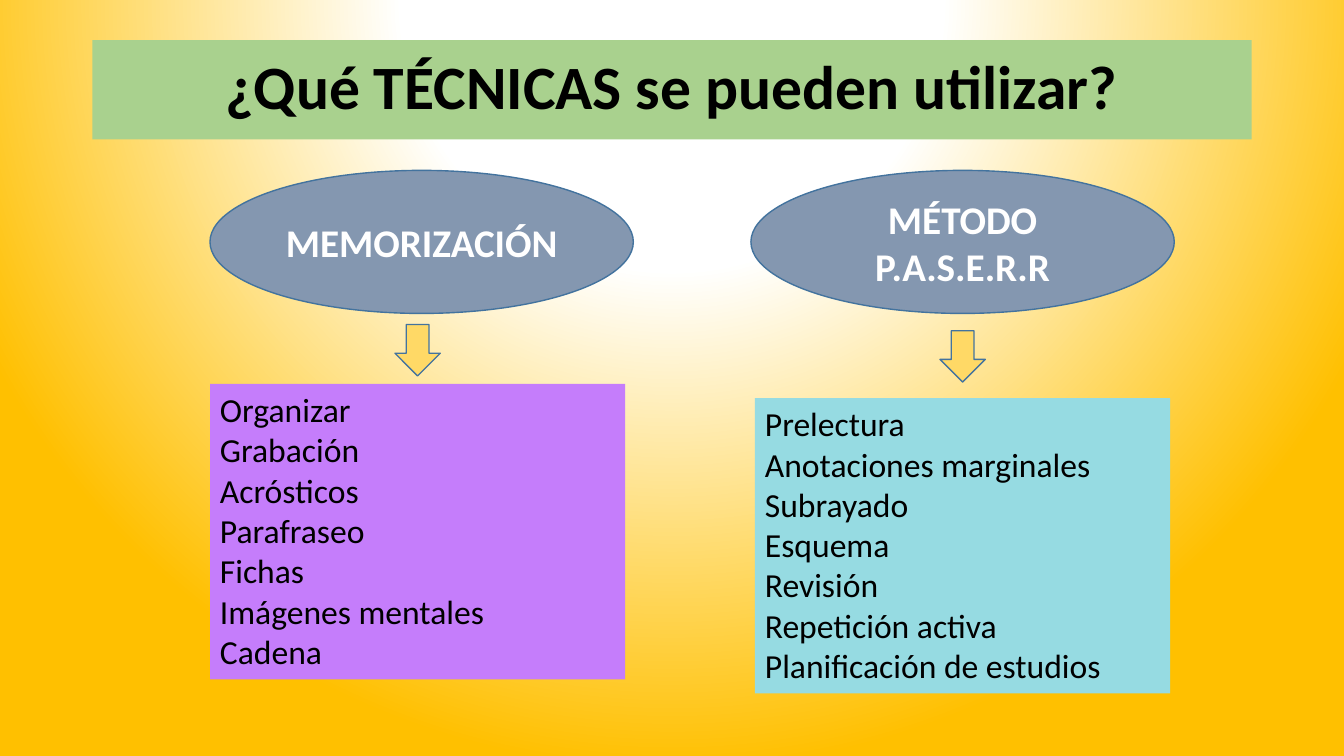
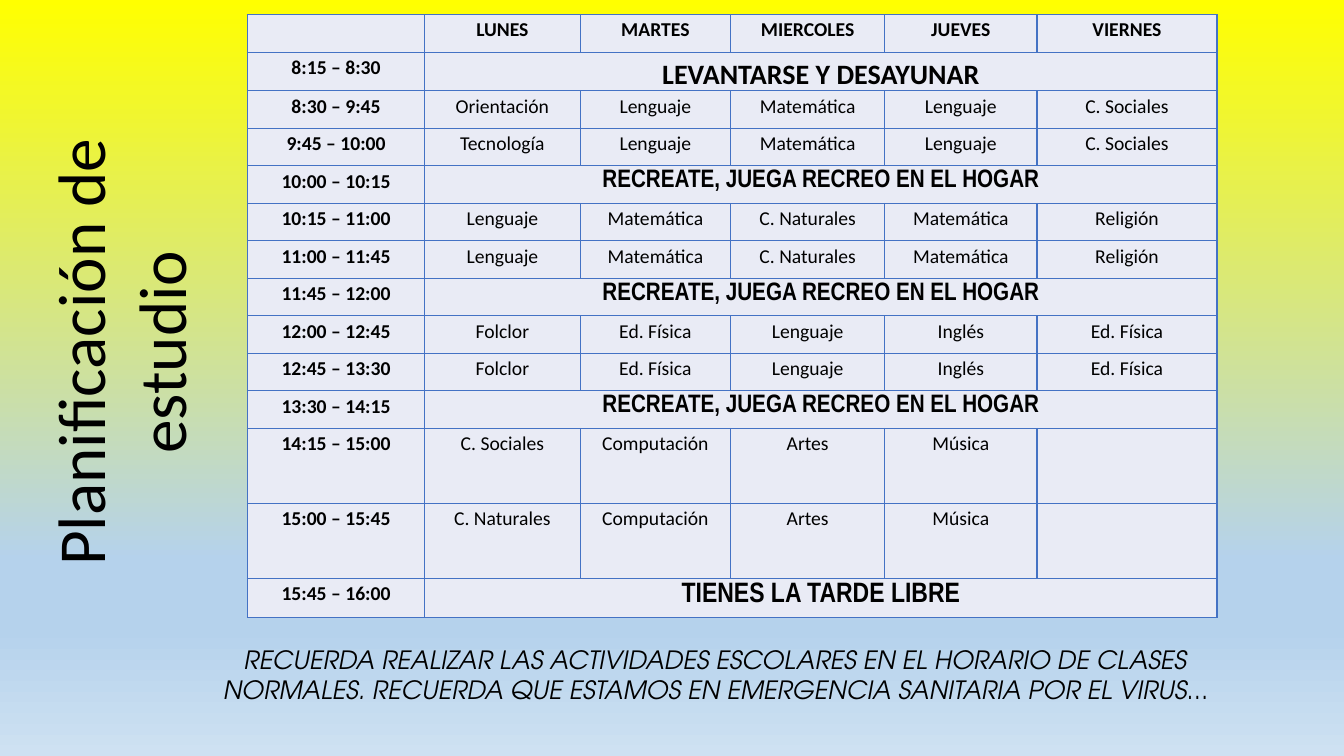
from pptx import Presentation
from pptx.dml.color import RGBColor
from pptx.enum.shapes import MSO_SHAPE as Shape
from pptx.enum.text import MSO_ANCHOR as Anchor, MSO_AUTO_SIZE as AutoSize, PP_ALIGN as Align
from pptx.oxml import parse_xml
from pptx.oxml.ns import nsdecls
from pptx.util import Pt

COLORS = {
    "black": "000000", "white": "FFFFFF", "gold": "FFC000", "yellow": "FFFF00",
    "sky": "B5D2EC", "pale_sky": "CEE1F2", "title_band": "A9D18E",
    "topic": "8497B0", "outline": "43739E", "arrow": "FFD966",
    "purple": "C57DFB", "aqua": "96DBE2", "cell": "E9EBF5", "border": "4472C4",
}
BODY_FONT = "Calibri"
NARROW_FONT = "Arial Narrow"
NOTE_FONT = "TeX Gyre Adventor"
TITLE_ONLY, BLANK = 5, 6

RADIAL = '<a:path path="circle"><a:fillToRect l="50000" t="-80000" r="50000" b="180000"/></a:path>'
VERTICAL = '<a:lin ang="5400000" scaled="0"/>'

TECHNIQUES = [
    {
        "topic": "MEMORIZACIÓN", "topic_left": 150, "list_left": 150,
        "arrow_top": 231.8, "list_top": 274.3, "color": "purple",
        "items": ["Organizar", "Grabación", "Acrósticos", "Parafraseo", "Fichas",
                  "Imágenes mentales", "Cadena"],
    },
    {
        "topic": "MÉTODO P.A.S.E.R.R", "topic_left": 536.4, "list_left": 539.3,
        "arrow_top": 236.2, "list_top": 284.4, "color": "aqua",
        "items": ["Prelectura", "Anotaciones marginales", "Subrayado", "Esquema", "Revisión",
                  "Repetición activa", "Planificación de estudios"],
    },
]

BREAK = ("RECREATE, JUEGA RECREO EN EL HOGAR", 18, NARROW_FONT)
DAYS = ["LUNES", "MARTES", "MIERCOLES", "JUEVES", "VIERNES"]
SCHEDULE = [
    ("8:15 – 8:30", ("LEVANTARSE Y DESAYUNAR", 20, BODY_FONT)),
    ("8:30 – 9:45", ["Orientación", "Lenguaje", "Matemática", "Lenguaje", "C. Sociales"]),
    ("9:45 – 10:00", ["Tecnología", "Lenguaje", "Matemática", "Lenguaje", "C. Sociales"]),
    ("10:00 – 10:15", BREAK),
    ("10:15 – 11:00", ["Lenguaje", "Matemática", "C. Naturales", "Matemática", "Religión"]),
    ("11:00 – 11:45", ["Lenguaje", "Matemática", "C. Naturales", "Matemática", "Religión"]),
    ("11:45 – 12:00", BREAK),
    ("12:00 – 12:45", ["Folclor", "Ed. Física", "Lenguaje", "Inglés", "Ed. Física"]),
    ("12:45 – 13:30", ["Folclor", "Ed. Física", "Lenguaje", "Inglés", "Ed. Física"]),
    ("13:30 – 14:15", BREAK),
    ("14:15 – 15:00", ["C. Sociales", "Computación", "Artes", "Música", ""]),
    ("15:00 – 15:45", ["C. Naturales", "Computación", "Artes", "Música", ""]),
    ("15:45 – 16:00", ("TIENES LA TARDE LIBRE", 20, NARROW_FONT)),
]
COLUMN_WIDTHS = [126.6, 111, 107.6, 110, 108.8, 128.6]
ROW_HEIGHT = 26.8
TALL_ROWS = (11, 12)


def rgb(name):
    """Return the named colour."""
    return RGBColor.from_string(COLORS[name])


def set_background(slide, stops, direction):
    """Give the slide a gradient background."""
    stop_xml = "".join(
        f'<a:gs pos="{position * 1000}"><a:srgbClr val="{COLORS[name]}"/></a:gs>'
        for position, name in stops
    )
    slide.element.cSld.insert(0, parse_xml(
        f'<p:bg {nsdecls("p", "a")}><p:bgPr><a:gradFill rotWithShape="1">'
        f'<a:gsLst>{stop_xml}</a:gsLst>{direction}</a:gradFill><a:effectLst/></p:bgPr></p:bg>'
    ))


def add_text(paragraph, text, size, font=BODY_FONT, color="black", bold=False, italic=False,
             align=Align.CENTER, spacing=1.0):
    """Add one formatted run to a paragraph."""
    paragraph.alignment = align
    paragraph.line_spacing = spacing
    run = paragraph.add_run()
    run.text = text
    run.font.size = Pt(size)
    run.font.name = font
    run.font.bold = bold
    run.font.italic = italic
    run.font.color.rgb = rgb(color)


def set_title(slide, box, text):
    """Place, fill and write the title placeholder."""
    title = slide.shapes.title
    title.left, title.top, title.width, title.height = map(Pt, box)
    title.fill.solid()
    title.fill.fore_color.rgb = rgb("title_band")
    frame = title.text_frame
    frame.word_wrap = True
    frame.auto_size = AutoSize.NONE
    frame.vertical_anchor = Anchor.MIDDLE
    add_text(frame.paragraphs[0], text, 44, bold=True, spacing=0.9)


def add_block(slide, kind, box, fill, outline=None):
    """Add a flat filled shape."""
    shape = slide.shapes.add_shape(kind, *map(Pt, box))
    shape.shadow.inherit = False
    shape.fill.solid()
    shape.fill.fore_color.rgb = rgb(fill)
    if outline:
        shape.line.color.rgb = rgb(outline)
        shape.line.width = Pt(1)
    else:
        shape.line.fill.background()
    return shape


def add_technique(slide, technique):
    """Add a topic ellipse, its arrow and its list."""
    topic = add_block(slide, Shape.OVAL, (technique["topic_left"], 121.7, 302.4, 102.2),
                      "topic", "outline")
    topic.text_frame.word_wrap = True
    topic.text_frame.vertical_anchor = Anchor.MIDDLE
    add_text(topic.text_frame.paragraphs[0], technique["topic"], 28, color="white", bold=True)

    list_width, arrow_width = 296.6, 32.4
    arrow_left = technique["list_left"] + (list_width - arrow_width) / 2
    add_block(slide, Shape.DOWN_ARROW, (arrow_left, technique["arrow_top"], arrow_width, 36.7),
              "arrow", "outline")

    box = (technique["list_left"], technique["list_top"], list_width, 211)
    frame = add_block(slide, Shape.RECTANGLE, box, technique["color"]).text_frame
    frame.word_wrap = True
    frame.auto_size = AutoSize.SHAPE_TO_FIT_TEXT
    frame.vertical_anchor = Anchor.TOP
    for index, item in enumerate(technique["items"]):
        paragraph = frame.add_paragraph() if index else frame.paragraphs[0]
        add_text(paragraph, item, 24, align=Align.LEFT)


def format_cell(cell):
    """Set the margins, fill and borders of a cell."""
    cell.margin_left = cell.margin_right = Pt(5)
    cell.margin_top = cell.margin_bottom = Pt(0)
    cell.fill.solid()
    cell.fill.fore_color.rgb = rgb("cell")
    properties = cell._tc.get_or_add_tcPr()
    for index, side in enumerate(("lnL", "lnR", "lnT", "lnB")):
        properties.insert(index, parse_xml(
            f'<a:{side} {nsdecls("a")} w="{Pt(1)}"><a:solidFill>'
            f'<a:srgbClr val="{COLORS["border"]}"/></a:solidFill></a:{side}>'
        ))


def fill_cell(cell, text, size=14, font=BODY_FONT, bold=True):
    """Write centred text in a cell."""
    if text:
        add_text(cell.text_frame.paragraphs[0], text, size, font, bold=bold, spacing=1.15)


def add_schedule(slide):
    """Add the weekly timetable."""
    row_count = len(SCHEDULE) + 1
    heights = [ROW_HEIGHT * (2 if row in TALL_ROWS else 1) for row in range(row_count)]
    frame = slide.shapes.add_table(row_count, len(COLUMN_WIDTHS), Pt(176.8), Pt(10.5),
                                   Pt(sum(COLUMN_WIDTHS)), Pt(sum(heights)))
    table = frame.table
    table.first_row = table.horz_banding = False
    for column, width in zip(table.columns, COLUMN_WIDTHS):
        column.width = Pt(width)
    for row, height in zip(table.rows, heights):
        row.height = Pt(height)
    for cell in table.iter_cells():
        format_cell(cell)
    for column, day in enumerate(DAYS, 1):
        fill_cell(table.cell(0, column), day)
    for row, (hours, content) in enumerate(SCHEDULE, 1):
        fill_cell(table.cell(row, 0), hours)
        if isinstance(content, tuple):
            table.cell(row, 1).merge(table.cell(row, len(DAYS)))
            fill_cell(table.cell(row, 1), *content)
        else:
            for column, subject in enumerate(content, 1):
                fill_cell(table.cell(row, column), subject, bold=False)


def add_text_box(slide, box, text, size, direction="horz", **style):
    """Add a wrapped text box that reads in the given direction."""
    frame = slide.shapes.add_textbox(*map(Pt, box)).text_frame
    frame.word_wrap = True
    frame._txBody.bodyPr.set("vert", direction)
    add_text(frame.paragraphs[0], text, size, **style)


def build_techniques(slide):
    """Build the slide of study techniques."""
    set_background(slide, [(0, "white"), (35, "white"), (100, "gold")], RADIAL)
    set_title(slide, (66, 28.6, 828, 71), "¿Qué TÉCNICAS se pueden utilizar?")
    for technique in TECHNIQUES:
        add_technique(slide, technique)


def build_planning(slide):
    """Build the slide of the study timetable."""
    set_background(slide, [(0, "yellow"), (74, "sky"), (83, "sky"), (100, "pale_sky")], VERTICAL)
    add_text_box(slide, (23.8, 22.3, 131, 458.6), "Planificación de estudio", 48, "vert270")
    add_schedule(slide)
    add_text_box(slide, (139.7, 456.5, 743, 72.7),
                 "RECUERDA REALIZAR LAS ACTIVIDADES ESCOLARES EN EL HORARIO DE CLASES NORMALES. "
                 "RECUERDA QUE ESTAMOS EN EMERGENCIA SANITARIA POR EL VIRUS…",
                 18, font=NOTE_FONT, italic=True)


def main():
    """Build and save the presentation."""
    presentation = Presentation()
    presentation.slide_width, presentation.slide_height = Pt(960), Pt(540)
    for build, layout in ((build_techniques, TITLE_ONLY), (build_planning, BLANK)):
        build(presentation.slides.add_slide(presentation.slide_layouts[layout]))
    presentation.save("out.pptx")


if __name__ == "__main__":
    main()
